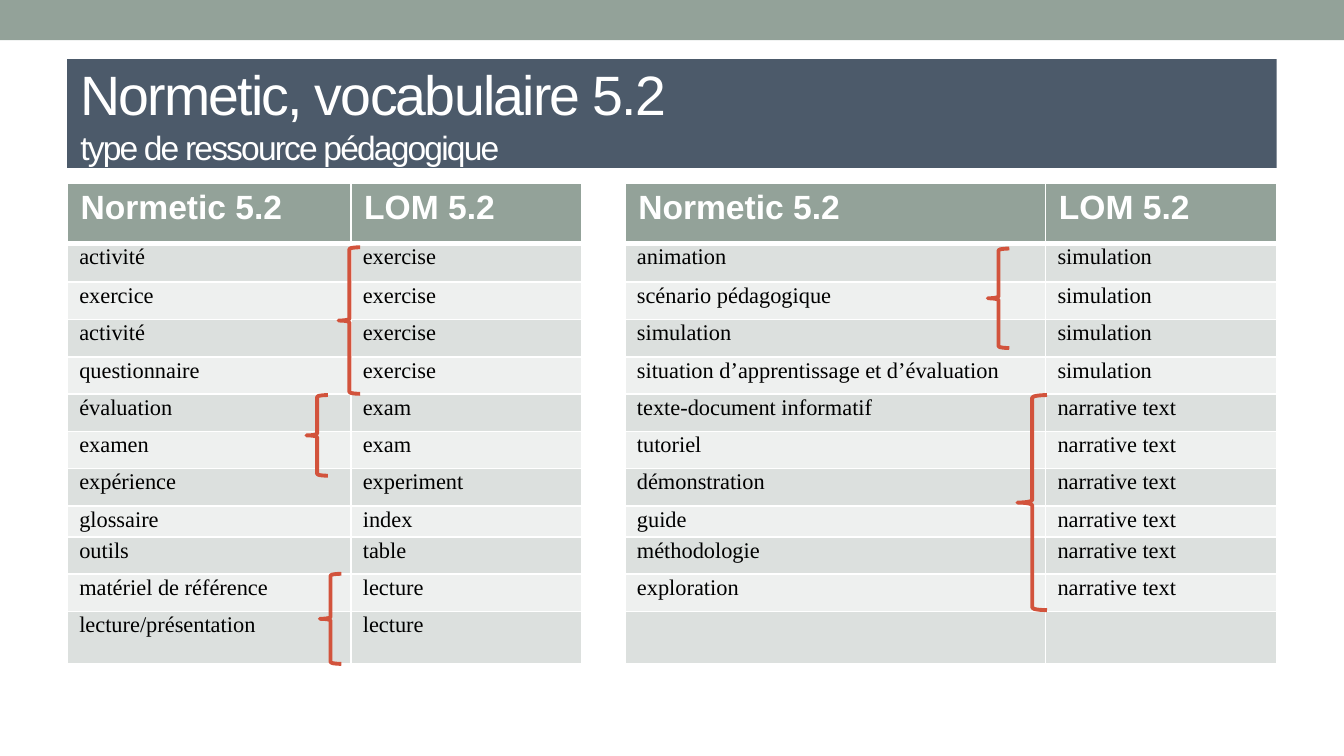
from lxml.etree import SubElement
from pptx import Presentation
from pptx.dml.color import RGBColor
from pptx.enum.shapes import MSO_SHAPE as Shape
from pptx.enum.text import MSO_ANCHOR as Anchor, PP_ALIGN as Align
from pptx.oxml.ns import qn
from pptx.util import Inches, Pt

WHITE = RGBColor(0xFF, 0xFF, 0xFF)
BLACK = RGBColor(0, 0, 0)
SAGE = RGBColor(0x93, 0xA2, 0x99)
SLATE = RGBColor(0x4C, 0x5A, 0x6A)
BANDS = [RGBColor(0xDC, 0xE0, 0xDE), RGBColor(0xEE, 0xF0, 0xEF)]
RED = RGBColor(0xD2, 0x53, 0x3C)

WIDTH = 10
HEIGHT = WIDTH * 9 / 16
TITLE = "Normetic, vocabulaire 5.2 "
SUBTITLE = "type de ressource pédagogique"
HEADER = ["Normetic 5.2", "LOM 5.2"]
LEFT = [
    ("activité", "exercise"),
    ("exercice", "exercise"),
    ("activité", "exercise"),
    ("questionnaire", "exercise"),
    ("évaluation", "exam"),
    ("examen", "exam"),
    ("expérience", "experiment"),
    ("glossaire", "index"),
    ("outils", "table"),
    ("matériel de référence", "lecture"),
    ("lecture/présentation", "lecture"),
]
RIGHT = [
    ("animation", "simulation"),
    ("scénario pédagogique", "simulation"),
    ("simulation", "simulation"),
    ("situation d’apprentissage et d’évaluation", "simulation"),
    ("texte-document informatif", "narrative text"),
    ("tutoriel", "narrative text"),
    ("démonstration", "narrative text"),
    ("guide", "narrative text"),
    ("méthodologie", "narrative text"),
    ("exploration", "narrative text"),
    ("", ""),
]
COLS = [2.11, 1.72, 0.32, 3.13, 1.72]
GAP = 2  # empty column between the two lists
ROW = 20 / 72
ROWS = [0.45, 0.29] + [ROW] * 6 + [0.23] + [ROW] * 2 + [0.39]
BRACES = [  # left, top, width, height
    (2.52, 1.84, 0.16, 1.09),
    (2.28, 2.94, 0.16, 0.6),
    (2.38, 4.27, 0.16, 0.67),
    (7.35, 1.85, 0.16, 0.74),
    (7.57, 2.94, 0.22, 1.6),
]


def add_shape(slide, kind, box, fill=None):
    shape = slide.shapes.add_shape(kind, *map(Inches, box))
    shape.shadow.inherit = False
    if fill is None:
        shape.fill.background()
    else:
        shape.fill.solid()
        shape.fill.fore_color.rgb = fill
        shape.line.fill.background()
    return shape


def add_run(para, text, size, color, font="Arial", bold=False):
    run = para.add_run()
    run.text = text
    run.font.size = Pt(size)
    run.font.name = font
    run.font.bold = bold
    run.font.color.rgb = color
    return run


def add_title(slide):
    bar = add_shape(slide, Shape.RECTANGLE, (0.5, 0.44, 9, 0.81), SLATE)
    frame = bar.text_frame
    frame.word_wrap = True
    frame.vertical_anchor = Anchor.MIDDLE
    para = frame.paragraphs[0]
    para.alignment = Align.LEFT
    runs = [add_run(para, TITLE, 29.7, WHITE)]
    para.add_line_break()
    runs.append(add_run(para, SUBTITLE, 18, WHITE))
    for run in runs:
        run.font._element.set("spc", "-100")


def set_borders(cell, widths):
    props = cell._tc.get_or_add_tcPr()
    for side, width in zip("LRTB", widths):
        line = SubElement(props, qn(f"a:ln{side}"), w=str(Pt(width)))
        fill = SubElement(line, qn("a:solidFill"))
        SubElement(fill, qn("a:srgbClr"), val=str(WHITE))


def fill_cell(cell, text, row, gap):
    head = row == 0
    set_borders(cell, (1, 1, 3 if row == 1 else 1, 3 if head else 1))
    cell.fill.solid()
    cell.fill.fore_color.rgb = (
        WHITE if gap else SAGE if head else BANDS[(row - 1) % 2])
    para = cell.text_frame.paragraphs[0]
    if not head:
        cell.margin_left = cell.margin_right = cell.margin_top = Inches(0.01)
        cell.margin_bottom = 0
        para._p.get_or_add_pPr().set("marL", str(Inches(0.08)))
    if not text:  # keeps an empty cell from stretching its row
        SubElement(para._p, qn("a:endParaRPr"), sz="1200")
    elif head:
        add_run(para, text, 18, WHITE, bold=True)
    else:
        add_run(para, text, 12, BLACK, "Times New Roman")


def add_vocabulary(slide):
    lines = [[*HEADER, "", *HEADER]]
    lines += [[*a, "", *b] for a, b in zip(LEFT, RIGHT)]
    box = (0.5, 1.36, sum(COLS), sum(ROWS))
    table = slide.shapes.add_table(
        len(ROWS), len(COLS), *map(Inches, box)).table
    table.horz_banding = False
    for col, width in zip(table.columns, COLS):
        col.width = Inches(width)
    for r, (row, height) in enumerate(zip(table.rows, ROWS)):
        row.height = Inches(height)
        for c, text in enumerate(lines[r]):
            fill_cell(table.cell(r, c), text, r, c == GAP)


def main():
    deck = Presentation()
    deck.slide_width, deck.slide_height = Inches(WIDTH), Inches(HEIGHT)
    slide = deck.slides.add_slide(deck.slide_layouts[6])
    add_shape(slide, Shape.RECTANGLE, (0, 0, WIDTH, 0.3), SAGE)
    add_title(slide)
    add_vocabulary(slide)
    for box in BRACES:
        brace = add_shape(slide, Shape.LEFT_BRACE, box)
        brace.line.color.rgb = RED
        brace.line.width = Pt(2.08)
    deck.save("out.pptx")


if __name__ == "__main__":
    main()
